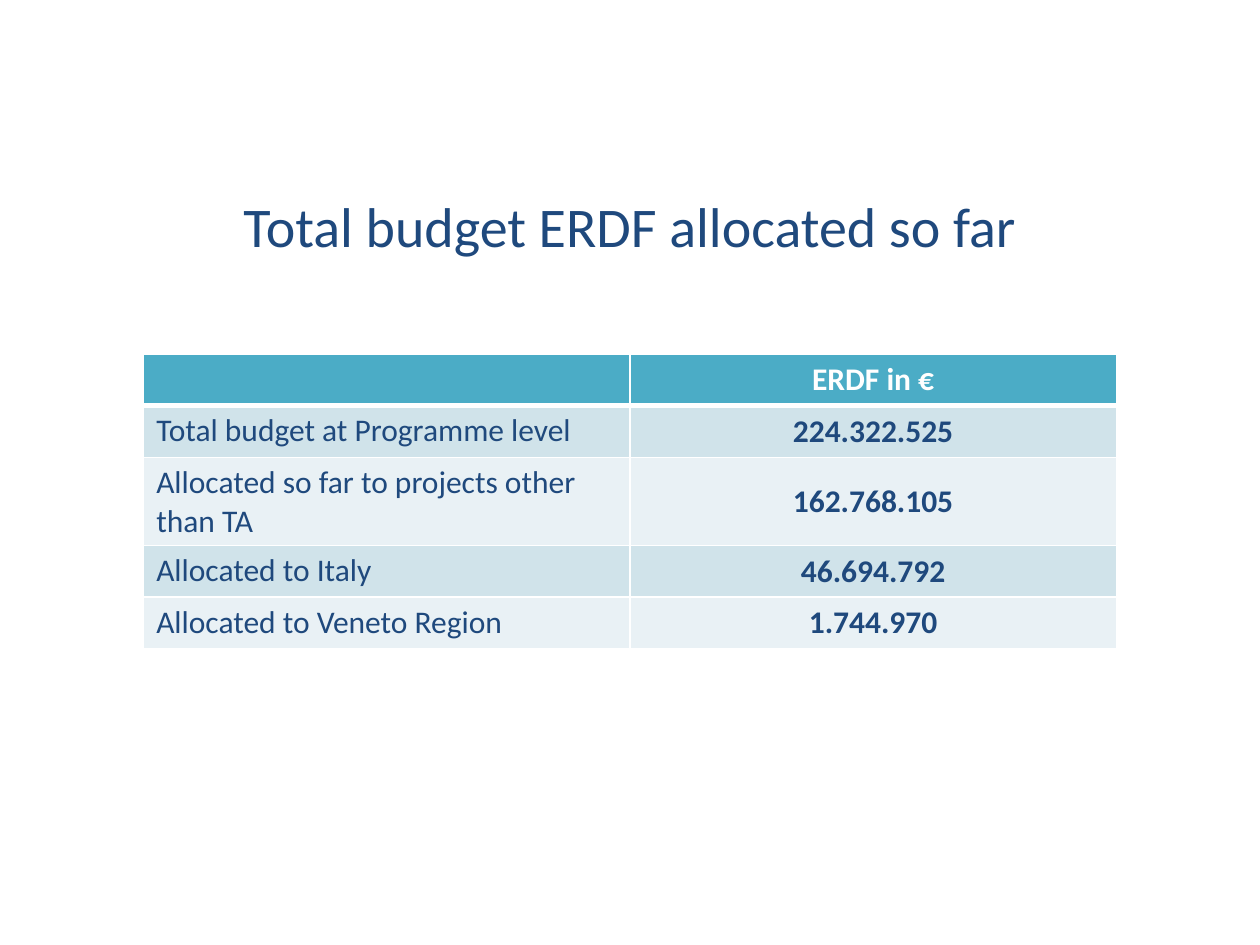
from dataclasses import dataclass

import pptx
import pptx.dml.color
import pptx.enum.text
import pptx.oxml
import pptx.oxml.ns
import pptx.util
from pptx.util import Inches

ALIGN = pptx.enum.text.PP_ALIGN
ANCHOR = pptx.enum.text.MSO_ANCHOR


@dataclass(frozen=True)
class Theme:
    font: str = "Calibri"
    navy: str = "1F497D"
    teal: str = "4BACC6"
    bands: tuple = ("D0E3EA", "E9F1F5")
    white: str = "FFFFFF"
    title: int = 32
    body: int = 18
    thin: int = 1
    thick: int = 3


THEME = Theme()

HEADER = ("", "ERDF in €")
BUDGET = (
    ("Total budget at Programme level", "224.322.525"),
    ("Allocated so far to projects other than TA", "162.768.105"),
    ("Allocated to Italy", "46.694.792"),
    ("Allocated to Veneto Region", "1.744.970"),
)


def rgb(code):
    return pptx.dml.color.RGBColor.from_string(code)


def write(frame, text, size, color, bold=False, align=ALIGN.LEFT):
    para = frame.paragraphs[0]
    para.alignment = align
    if not text:
        para.font.size = pptx.util.Pt(size)
        return
    run = para.add_run()
    run.text = text
    font = run.font
    font.name = THEME.font
    font.size = pptx.util.Pt(size)
    font.bold = bold
    font.color.rgb = rgb(color)


def add_title(slide, text):
    box = slide.shapes.add_textbox(Inches(0.5), Inches(1.4), Inches(9), Inches(0.77))
    frame = box.text_frame
    frame.word_wrap = True
    frame.vertical_anchor = ANCHOR.MIDDLE
    write(frame, text, THEME.title, THEME.navy, align=ALIGN.CENTER)


def set_edges(cell, top, bottom):
    """Draw white cell borders; top and bottom are widths in points."""
    props = cell._tc.get_or_add_tcPr()
    widths = {"lnL": THEME.thin, "lnR": THEME.thin, "lnT": top, "lnB": bottom}
    for tag, width in widths.items():
        props.append(pptx.oxml.parse_xml(
            f'<a:{tag} {pptx.oxml.ns.nsdecls("a")} w="{pptx.util.Pt(width)}">'
            f'<a:solidFill><a:srgbClr val="{THEME.white}"/></a:solidFill></a:{tag}>'
        ))


def fill_cell(cell, fill, top, bottom):
    set_edges(cell, top, bottom)
    cell.fill.solid()
    cell.fill.fore_color.rgb = rgb(fill)


def add_table(slide, header, rows):
    count = len(rows) + 1
    table = slide.shapes.add_table(
        count, len(header), Inches(1.14), Inches(2.81), Inches(7.72), Inches(0.41 * count)
    ).table

    for cell, text in zip(table.rows[0].cells, header):
        fill_cell(cell, THEME.teal, THEME.thin, THEME.thick)
        write(cell.text_frame, text, THEME.body, THEME.white, True, ALIGN.CENTER)

    for index, (label, amount) in enumerate(rows):
        name, value = table.rows[index + 1].cells
        top = THEME.thin if index else THEME.thick
        for cell in (name, value):
            fill_cell(cell, THEME.bands[index % 2], top, THEME.thin)
        write(name.text_frame, label, THEME.body, THEME.navy)
        value.vertical_anchor = ANCHOR.MIDDLE
        write(value.text_frame, amount, THEME.body, THEME.navy, True, ALIGN.CENTER)


def main():
    deck = pptx.Presentation()
    deck.slide_width, deck.slide_height = Inches(10), Inches(7.5)
    slide = deck.slides.add_slide(deck.slide_layouts[6])
    add_title(slide, "Total budget ERDF allocated so far")
    add_table(slide, HEADER, BUDGET)
    deck.save("out.pptx")


if __name__ == "__main__":
    main()
